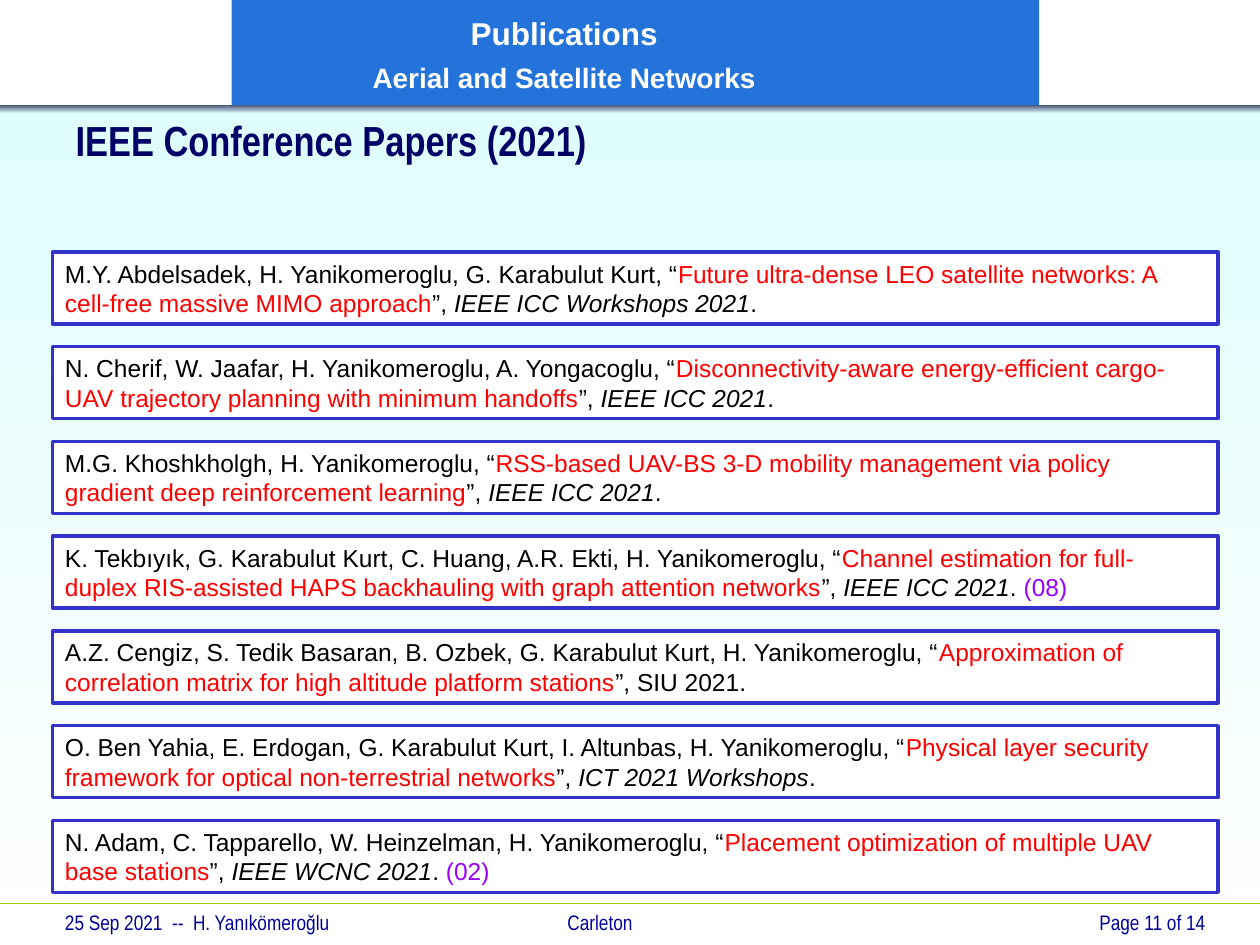
from dataclasses import dataclass

from lxml import etree
from pptx import Presentation
from pptx.dml.color import RGBColor
from pptx.enum.shapes import MSO_CONNECTOR, MSO_SHAPE
from pptx.enum.text import MSO_ANCHOR, MSO_AUTO_SIZE, PP_ALIGN
from pptx.oxml.ns import qn
from pptx.util import Cm, Pt

RECT = MSO_SHAPE.RECTANGLE
STRAIGHT = MSO_CONNECTOR.STRAIGHT
MIDDLE = MSO_ANCHOR.MIDDLE
TOP = MSO_ANCHOR.TOP
LEFT, CENTER, RIGHT = PP_ALIGN.LEFT, PP_ALIGN.CENTER, PP_ALIGN.RIGHT
NO_FIT = MSO_AUTO_SIZE.NONE


@dataclass(frozen=True)
class Theme:
    """Colours, fonts and type sizes of the slide."""
    body_font: str = "Arial"
    narrow_font: str = "Arial Narrow"
    white: str = "FFFFFF"
    black: str = "000000"
    sky: str = "DFFDFD"
    slate: str = "475577"
    banner: str = "2473DB"
    border: str = "3333CC"
    green: str = "99CC00"
    navy: str = "000066"
    footer: str = "000099"
    red: str = "FF0000"
    violet: str = "9900FF"
    title_size: int = 24
    banner_size: int = 18
    subtitle_size: int = 16
    paper_size: int = 14
    footer_size: int = 12


THEME = Theme()

PAPERS = [
    ("M.Y. Abdelsadek, H. Yanikomeroglu, G. Karabulut Kurt",
     "Future ultra-dense LEO satellite networks: A cell-free massive MIMO approach",
     "", "IEEE ICC Workshops 2021", ""),
    ("N. Cherif, W. Jaafar, H. Yanikomeroglu, A. Yongacoglu",
     "Disconnectivity-aware energy-efficient cargo-UAV trajectory planning with minimum handoffs",
     "", "IEEE ICC 2021", ""),
    ("M.G. Khoshkholgh, H. Yanikomeroglu",
     "RSS-based UAV-BS 3-D mobility management via policy gradient deep reinforcement learning",
     "", "IEEE ICC 2021", ""),
    ("K. Tekbıyık, G. Karabulut Kurt, C. Huang, A.R. Ekti, H. Yanikomeroglu",
     "Channel estimation for full-duplex RIS-assisted HAPS backhauling with graph attention networks",
     "", "IEEE ICC 2021", "(08)"),
    ("A.Z. Cengiz, S. Tedik Basaran, B. Ozbek, G. Karabulut Kurt, H. Yanikomeroglu",
     "Approximation of correlation matrix for high altitude platform stations",
     "SIU 2021", "", ""),
    ("O. Ben Yahia, E. Erdogan, G. Karabulut Kurt, I. Altunbas, H. Yanikomeroglu",
     "Physical layer security framework for optical non-terrestrial networks",
     "", "ICT 2021 Workshops", ""),
    ("N. Adam, C. Tapparello, W. Heinzelman, H. Yanikomeroglu",
     "Placement optimization of multiple UAV base stations",
     "", "IEEE WCNC 2021", "(02)"),
]


def rgb(value):
    """Return the colour for a hex string."""
    return RGBColor.from_string(value)


def add_run(p, text, size, color, font=THEME.body_font, bold=False, italic=False):
    """Add a formatted run to a paragraph."""
    r = p.add_run()
    r.text = text
    f = r.font
    f.name, f.size, f.bold, f.italic = font, Pt(size), bold, italic
    f.color.rgb = rgb(color)


def set_frame(tf, anchor=TOP):
    """Make a text frame wrap at a fixed size and return its first paragraph."""
    tf.word_wrap = True
    tf.auto_size = NO_FIT
    tf.vertical_anchor = anchor
    return tf.paragraphs[0]


def add_rect(s, left, top, width, height, fill, line=None):
    """Add a rectangle with a plain fill, or a downward gradient for two colours."""
    sp = s.shapes.add_shape(RECT, Cm(left), Cm(top), Cm(width), Cm(height))
    sp.shadow.inherit = False
    if isinstance(fill, tuple):
        sp.fill.gradient()
        sp.fill.gradient_angle = 270
        for stop, color in zip(sp.fill.gradient_stops, fill):
            stop.color.rgb = rgb(color)
    else:
        sp.fill.solid()
        sp.fill.fore_color.rgb = rgb(fill)
    if line:
        sp.line.color.rgb = rgb(line)
        sp.line.width = Pt(2)
    else:
        sp.line.fill.background()
    return sp


def add_rule(s, top, width):
    """Add the thin rule above the footer."""
    c = s.shapes.add_connector(STRAIGHT, 0, Cm(top), Cm(width), Cm(top))
    c.line.color.rgb = rgb(THEME.green)
    c.line.width = Pt(0.75)
    etree.SubElement(c._element.spPr, qn("a:effectLst"))


def add_footer(s, text, left, width, align=LEFT, tab=None):
    """Add a footer text, with an optional tab stop."""
    sp = s.shapes.add_textbox(Cm(left), Cm(18.21), Cm(width), Cm(0.75))
    p = set_frame(sp.text_frame)
    p.alignment = align
    if tab:
        tabs = etree.SubElement(p._p.get_or_add_pPr(), qn("a:tabLst"))
        etree.SubElement(tabs, qn("a:tab"), pos=str(Cm(tab)), algn="l")
    add_run(p, text, THEME.footer_size, THEME.footer, THEME.narrow_font)


def add_banner(s, title, subtitle):
    """Add the blue banner with its two centred lines."""
    tf = add_rect(s, 4.67, 0, 16.28, 2.12, THEME.banner).text_frame
    tf.margin_right = Cm(3.12)
    first = set_frame(tf, MIDDLE)
    second = tf.add_paragraph()
    second.space_before = Pt(3.2)
    for p, text, size in ((first, title, THEME.banner_size),
                          (second, subtitle, THEME.subtitle_size)):
        p.alignment = CENTER
        p.line_spacing = 1.1
        add_run(p, text, size, THEME.white, bold=True)


def add_paper(s, top, authors, title, plain_venue, venue, note):
    """Add one framed reference."""
    sp = add_rect(s, 1.06, top, 23.5, 1.45, THEME.white, THEME.border)
    p = set_frame(sp.text_frame, MIDDLE)
    p.alignment = LEFT
    size = THEME.paper_size
    add_run(p, f"{authors}, “", size, THEME.black)
    add_run(p, title, size, THEME.red)
    add_run(p, f"”, {plain_venue}", size, THEME.black)
    if venue:
        add_run(p, venue, size, THEME.black, italic=True)
    add_run(p, ". " if note else ".", size, THEME.black)
    if note:
        add_run(p, note, size, THEME.violet)


def set_title(s, text):
    """Place the title placeholder in front and format it."""
    sp = s.shapes.title
    sp.left, sp.top, sp.width, sp.height = Cm(1.27), Cm(2.29), Cm(21.8), Cm(1.07)
    p = set_frame(sp.text_frame, MIDDLE)
    p.alignment = LEFT
    add_run(p, text, THEME.title_size, THEME.navy, THEME.narrow_font, bold=True)
    s.shapes._spTree.append(sp._element)


def main():
    """Build the publications slide."""
    prs = Presentation()
    prs.slide_width, prs.slide_height = Cm(25.4), Cm(19.05)
    s = prs.slides.add_slide(prs.slide_layouts[5])
    add_rect(s, 0, 2.18, 25.4, 16.87, (THEME.sky, THEME.white))
    add_rule(s, 18.21, 25.4)
    add_footer(s, "25 Sep 2021  --  H. Yanıkömeroğlu\tCarleton", 1.06, 15.88, tab=10.13)
    add_footer(s, "Page 11 of 14", 19.05, 5.5, RIGHT)
    add_rect(s, 0, 2.12, 25.4, 0.17, (THEME.slate, THEME.sky))
    add_banner(s, "Publications", "Aerial and Satellite Networks")
    for i, paper in enumerate(PAPERS):
        add_paper(s, 5.08 + i * 1.91, *paper)
    set_title(s, "IEEE Conference Papers (2021)")
    prs.save("out.pptx")


if __name__ == "__main__":
    main()
